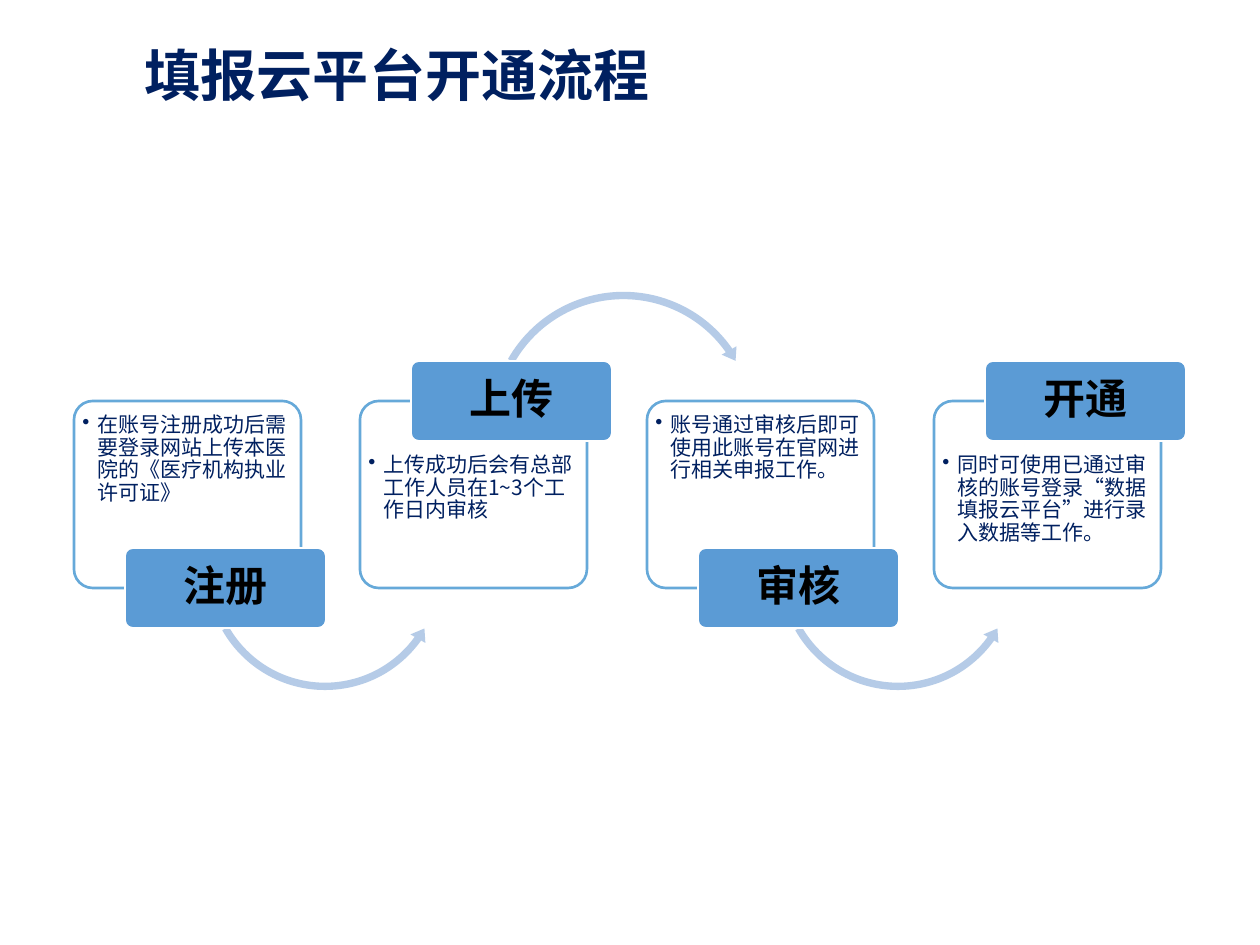
import pptx
import pptx.dml.color
import pptx.enum.shapes
import pptx.enum.text
import pptx.oxml.ns
import pptx.util
from lxml import etree

SHAPES = pptx.enum.shapes.MSO_SHAPE
ALIGN = pptx.enum.text.PP_ALIGN
ANCHOR = pptx.enum.text.MSO_ANCHOR
QN = pptx.oxml.ns.qn


def px(length):
    return pptx.util.Emu(round(length * 914400 / 126))


def color(value):
    return pptx.dml.color.RGBColor.from_string(value)


class FlowSlide:
    """Holds the style and the current slide, and draws each part of the flow."""

    font = "Noto Sans CJK SC"
    navy = "002060"
    blue = "5B9BD5"
    outline = "66A9D9"
    pale = "B5CBE7"
    white = "FFFFFF"
    black = "000000"

    def __init__(self, deck):
        self.slide = deck.slides.add_slide(deck.slide_layouts[6])

    def shape(self, preset, box, fill, adjustments, line=None, weight=1):
        part = self.slide.shapes.add_shape(preset, *map(px, box))
        part.shadow.inherit = False
        for index, value in enumerate(adjustments):
            part.adjustments[index] = value
        part.fill.solid()
        part.fill.fore_color.rgb = color(fill)
        if line:
            part.line.color.rgb = color(line)
            part.line.width = pptx.util.Pt(weight)
        else:
            part.line.fill.background()
        return part

    def add_text(self, part, text, size, ink, insets, bold=False,
                 align=ALIGN.LEFT, anchor=ANCHOR.MIDDLE, bullet=False):
        frame = part.text_frame
        frame.word_wrap = True
        frame.vertical_anchor = anchor
        (frame.margin_left, frame.margin_top,
         frame.margin_right, frame.margin_bottom) = map(px, insets)
        paragraph = frame.paragraphs[0]
        if bullet:
            properties = paragraph._p.get_or_add_pPr()
            properties.set("marL", str(px(15)))
            properties.set("indent", str(px(-15)))
            etree.SubElement(properties, QN("a:buChar")).set("char", "•")
        paragraph.alignment = align
        paragraph.line_spacing = 0.9
        run = paragraph.add_run()
        run.text = text
        run.font.size = pptx.util.Pt(size)
        run.font.bold = bold
        run.font.name = self.font
        run.font.color.rgb = color(ink)
        east_asian = etree.SubElement(run._r.get_or_add_rPr(), QN("a:ea"))
        east_asian.set("typeface", self.font)

    def title(self, text):
        heading = self.slide.shapes.add_textbox(*map(px, (132, 30, 1033, 96)))
        self.add_text(heading, text, 32, self.navy, (13, 6, 13, 6), bold=True)

    def card(self, left, text, raised):
        card = self.shape(SHAPES.ROUNDED_RECTANGLE, (left, 401, 227, 187),
                          self.white, [0.1], self.outline, 1.5)
        tint = card._element.spPr.find(QN("a:solidFill"))[0]
        etree.SubElement(tint, QN("a:alpha")).set("val", "90000")
        top = 48 if raised else 8
        self.add_text(card, text, 12, self.navy, (3, top, 4, 8),
                      anchor=ANCHOR.TOP, bullet=True)

    def arrow(self, left, raised):
        if raised:
            self.shape(SHAPES.CIRCULAR_ARROW, (left + 126, 287, 275, 275),
                       self.pale, [0.027, 3.243, 195.002, 125.755, 0.031])
        else:
            self.shape(SHAPES.LEFT_CIRCULAR_ARROW, (left + 128, 449, 246, 246),
                       self.pale, [0.03, 3.652, 21.407, 90.245, 0.035])

    def label(self, left, text, raised):
        top = 361 if raised else 548
        label = self.shape(SHAPES.ROUNDED_RECTANGLE, (left + 51, top, 201, 80),
                           self.blue, [0.1], self.white)
        self.add_text(label, text, 24, self.black, (8, 6, 8, 6), bold=True,
                      align=ALIGN.CENTER)


STEPS = [
    ("注册", "在账号注册成功后需要登录网站上传本医院的《医疗机构执业许可证》"),
    ("上传", "上传成功后会有总部工作人员在1~3个工作日内审核"),
    ("审核", "账号通过审核后即可使用此账号在官网进行相关申报工作。"),
    ("开通", "同时可使用已通过审核的账号登录“数据填报云平台”进行录入数据等工作。"),
]


def main():
    deck = pptx.Presentation()
    deck.slide_width, deck.slide_height = px(1260), px(945)
    flow = FlowSlide(deck)
    flow.title("填报云平台开通流程")
    for index, (name, detail) in enumerate(STEPS):
        left = 74 + index * 860 // 3
        raised = index % 2 == 1
        flow.card(left, detail, raised)
        if index < len(STEPS) - 1:
            flow.arrow(left, raised)
        flow.label(left, name, raised)
    deck.save("out.pptx")


if __name__ == "__main__":
    main()
